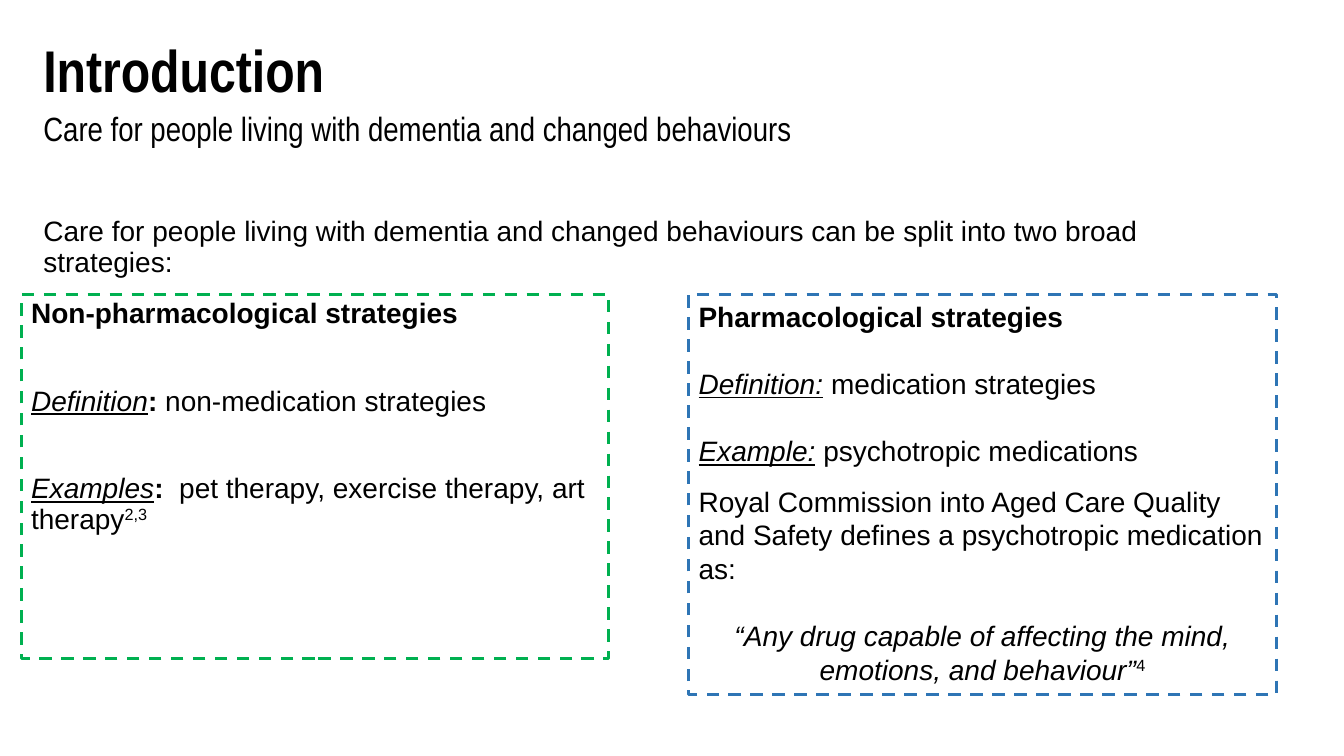
from dataclasses import dataclass

from lxml.etree import SubElement
from pptx import Presentation
from pptx.dml.color import RGBColor
from pptx.enum.dml import MSO_LINE
from pptx.enum.shapes import MSO_SHAPE
from pptx.enum.text import MSO_ANCHOR, MSO_AUTO_SIZE, PP_ALIGN
from pptx.oxml.ns import qn
from pptx.util import Emu, Pt


@dataclass(frozen=True)
class Theme:
    """Colours, fonts and type sizes of the slide."""
    text: RGBColor = RGBColor(0x00, 0x00, 0x00)
    green: RGBColor = RGBColor(0x00, 0xB0, 0x50)
    blue: RGBColor = RGBColor(0x2E, 0x75, 0xB5)
    heading_font: str = "Arial Narrow"
    body_font: str = "Arial"
    title: int = 42
    subtitle: int = 24
    body: int = 20
    border: float = 2.25


THEME = Theme()
SCALE = 9144
TIGHT = 0.9


def px(n):
    """Turn px, 100 to the inch, into EMU."""
    return Emu(n * SCALE)


def style_run(r, size, font, style=""):
    """Format a run; style letters are b, i, u and s for superscript."""
    r.font.size = Pt(size)
    r.font.name = font
    r.font.color.rgb = THEME.text
    r.font.bold = "b" in style
    r.font.italic = "i" in style
    r.font.underline = "u" in style
    if "s" in style:
        r.font._element.set("baseline", "30000")


def set_frame(tf):
    """Wrap text from the top of the box at its set size."""
    tf.word_wrap = True
    tf.auto_size = MSO_AUTO_SIZE.NONE
    tf.vertical_anchor = MSO_ANCHOR.TOP


def fill_placeholder(sp, box, text, size, font, style=""):
    """Move a placeholder and give it one plain line of text."""
    sp.left, sp.top, sp.width, sp.height = map(px, box)
    tf = sp.text_frame
    set_frame(tf)
    tf.text = text
    p = tf.paragraphs[0]
    pPr = p._p.get_or_add_pPr()
    pPr.set("marL", "0")
    pPr.set("indent", "0")
    SubElement(pPr, qn("a:buNone"))
    p.alignment = PP_ALIGN.LEFT
    p.line_spacing = TIGHT
    p.space_before = Pt(0)
    style_run(p.runs[0], size, font, style)


def add_panel(s, box, colour, paragraphs, spacing=1.0):
    """Add a dashed box of (space before, alignment, runs) paragraphs."""
    sp = s.shapes.add_shape(MSO_SHAPE.RECTANGLE, *map(px, box))
    sp.shadow.inherit = False
    sp.fill.background()
    sp.line.color.rgb = colour
    sp.line.width = Pt(THEME.border)
    sp.line.dash_style = MSO_LINE.DASH
    tf = sp.text_frame
    set_frame(tf)
    for i, (before, align, runs) in enumerate(paragraphs):
        p = tf.add_paragraph() if i else tf.paragraphs[0]
        p.alignment = align
        p.line_spacing = spacing
        p.space_before = Pt(before)
        for text, style in runs:
            r = p.add_run()
            r.text = text
            style_run(r, THEME.body, THEME.body_font, style)


def main():
    """Build the slide and save it."""
    prs = Presentation()
    prs.slide_width, prs.slide_height = px(1333), px(750)
    s = prs.slides.add_slide(prs.slide_layouts[3])
    title, subtitle, intro = s.placeholders
    fill_placeholder(title, (33, 36, 815, 81), "Introduction",
                     THEME.title, THEME.heading_font, "b")
    fill_placeholder(subtitle, (33, 107, 1044, 51),
                     "Care for people living with dementia and changed behaviours",
                     THEME.subtitle, THEME.heading_font)
    fill_placeholder(intro, (33, 211, 1183, 89),
                     "Care for people living with dementia and changed behaviours "
                     "can be split into two broad strategies:",
                     THEME.body, THEME.body_font)

    left, centre = PP_ALIGN.LEFT, PP_ALIGN.CENTER
    add_panel(s, (21, 292, 583, 361), THEME.green, [
        (0, left, [("Non-pharmacological strategies", "b")]),
        (41, left, [("Definition", "iu"), (": ", "b"),
                    ("non-medication strategies", "")]),
        (41, left, [("Examples", "iu"), (":  ", "b"),
                    ("pet therapy, exercise therapy, art therapy", ""),
                    ("2,3", "s")]),
    ], TIGHT)
    add_panel(s, (683, 292, 583, 397), THEME.blue, [
        (0, left, [("Pharmacological strategies", "b")]),
        (24, left, [("Definition:", "iu"), (" ", "i"),
                    ("medication strategies", "")]),
        (24, left, [("Example:", "iu"), (" ", "i"),
                    ("psychotropic medications", "")]),
        (12, left, [("Royal Commission into Aged Care Quality and Safety "
                     "defines a psychotropic medication as:", "")]),
        (24, centre, [("“Any drug capable of affecting the mind, emotions, "
                       "and behaviour”", "i"), ("4", "s")]),
    ])
    prs.save("out.pptx")


if __name__ == "__main__":
    main()
